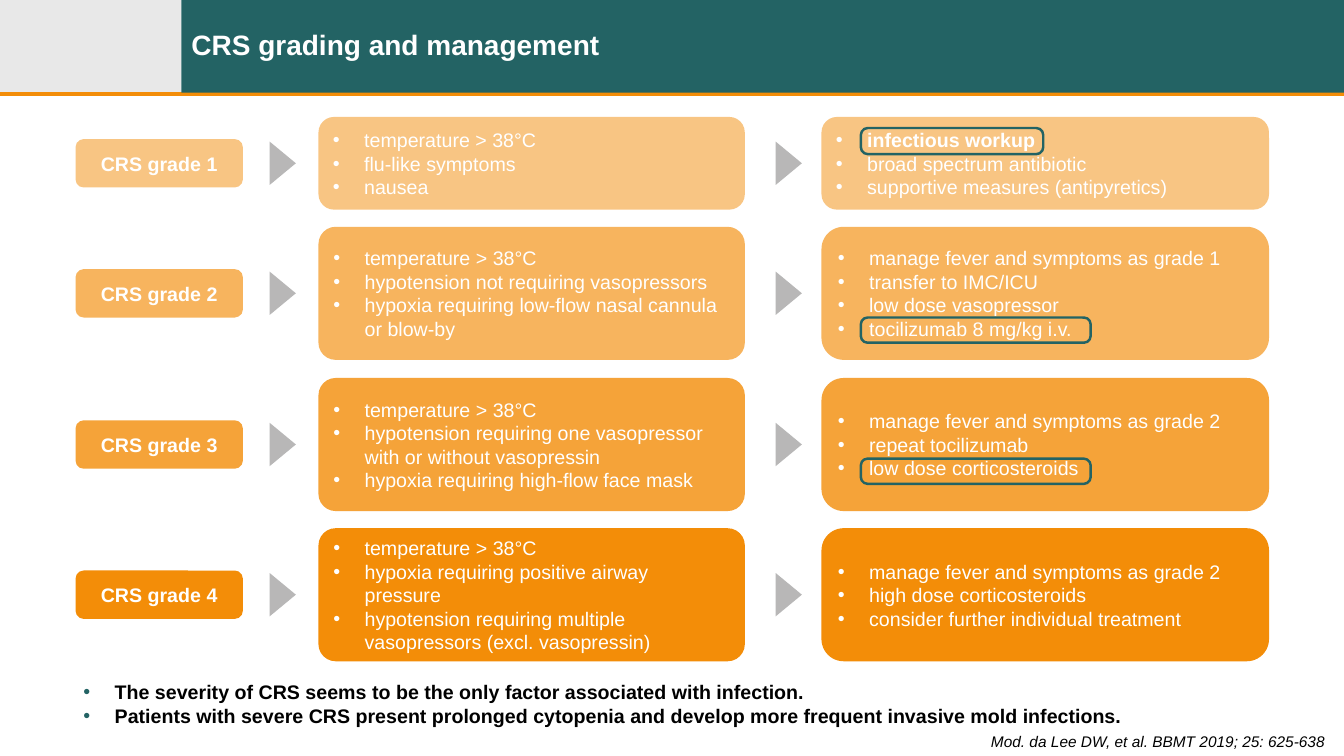
import pptx
import pptx.util
import pptx.dml.color
import pptx.enum.shapes
import pptx.enum.text
import lxml.etree

RGB = pptx.dml.color.RGBColor
KIND = pptx.enum.shapes.MSO_SHAPE
ALIGN = pptx.enum.text.PP_ALIGN
ANCHOR = pptx.enum.text.MSO_ANCHOR
NS = "http://schemas.openxmlformats.org/drawingml/2006/main"

TEAL = RGB(0x23, 0x63, 0x64)
ORANGE = RGB(0xF3, 0x8D, 0x08)
GREY = RGB(0xB8, 0xB7, 0xB7)
DARK = RGB(0x22, 0x22, 0x22)
WHITE = RGB(255, 255, 255)
BLACK = RGB(0, 0, 0)

COLS, ROWS = 160, 90
CELL = pptx.util.Inches(1) / 12
INDENT = pptx.util.Inches(0.31)

BODY = {"name": "Arial", "size": pptx.util.Pt(14), "bold": False, "italic": False}
STRONG = BODY | {"bold": True}
TITLE = STRONG | {"size": pptx.util.Pt(20)}
CITE = BODY | {"size": pptx.util.Pt(11), "italic": True}

HEAD = 11.04
LOGO = 21.6
ARROWS = (33.66, 93.9)

# row centre, box height, opacity, symptom corner, symptoms, care
GRADES = [
    (19.44, 11.04, 50, 0.167,
     ["temperature > 38°C", "flu-like symptoms", "nausea"],
     ["infectious workup", "broad spectrum antibiotic",
      "supportive measures (antipyretics)"]),
    (34.92, 15.84, 65, 0.129,
     ["temperature > 38°C", "hypotension not requiring vasopressors",
      "hypoxia requiring low-flow nasal cannula or blow-by"],
     ["manage fever and symptoms as grade 1", "transfer to IMC/ICU",
      "low dose vasopressor", "tocilizumab 8 mg/kg i.v."]),
    (52.92, 15.84, 80, 0.129,
     ["temperature > 38°C",
      "hypotension requiring one vasopressor with or without vasopressin",
      "hypoxia requiring high-flow face mask"],
     ["manage fever and symptoms as grade 2", "repeat tocilizumab",
      "low dose corticosteroids"]),
    (70.8, 15.84, 100, 0.129,
     ["temperature > 38°C", "hypoxia requiring positive airway pressure",
      "hypotension requiring multiple vasopressors (excl. vasopressin)"],
     ["manage fever and symptoms as grade 2", "high dose corticosteroids",
      "consider further individual treatment"]),
]
RINGS = [(15.24, 21.72, 3.12), (37.8, 27.36, 3), (54.6, 27.36, 3)]
NOTES = [
    "The severity of CRS seems to be the only factor associated with infection.",
    "Patients with severe CRS present prolonged cytopenia and develop more "
    "frequent invasive mold infections.",
]


def node(parent, tag, **attrs):
    return lxml.etree.SubElement(parent, f"{{{NS}}}{tag}", attrs)


def grid(*cells):
    """Turn grid cells into slide lengths."""
    return [round(cell * CELL) for cell in cells]


class Board:
    def __init__(self, slide):
        self.slide = slide

    def block(self, kind, place, fill=None, alpha=100, edge=None, bend=None):
        shape = self.slide.shapes.add_shape(kind, *grid(*place))
        shape.shadow.inherit = False
        if fill is None:
            shape.fill.background()
        else:
            shape.fill.solid()
            shape.fill.fore_color.rgb = fill
            if alpha < 100:
                tint = shape._element.spPr.find(f"{{{NS}}}solidFill/{{{NS}}}srgbClr")
                node(tint, "alpha", val=str(alpha * 1000))
        if edge is None:
            shape.line.fill.background()
        else:
            shape.line.color.rgb = edge
            shape.line.width = pptx.util.Pt(1.75)
        if bend is not None:
            shape.adjustments[0] = bend
        return shape

    def line(self, start, end, color, width):
        straight = pptx.enum.shapes.MSO_CONNECTOR.STRAIGHT
        rule = self.slide.shapes.add_connector(straight, *grid(*start, *end))
        rule.line.color.rgb = color
        rule.line.width = pptx.util.Pt(width)
        node(rule._element.spPr, "effectLst")

    def label(self, place, lines, look, color, anchor=ANCHOR.TOP, **more):
        box = self.slide.shapes.add_textbox(*grid(*place))
        self.text(box, lines, look, color, anchor=anchor, **more)
        return box

    def text(self, shape, lines, look, color, anchor=ANCHOR.MIDDLE,
             align=ALIGN.LEFT, dots=None, bold=()):
        """Fill a shape with paragraphs; dots is the bullet colour, if any."""
        frame = shape.text_frame
        frame.word_wrap = True
        frame.vertical_anchor = anchor
        for count, words in enumerate(lines):
            para = frame.add_paragraph() if count else frame.paragraphs[0]
            para.alignment = align
            if dots is not None:
                self.bullet(para, dots)
            run = para.add_run()
            run.text = words
            run.font.color.rgb = color
            for key, value in (STRONG if words in bold else look).items():
                setattr(run.font, key, value)

    def bullet(self, para, color):
        props = para._p.get_or_add_pPr()
        props.set("marL", str(INDENT))
        props.set("indent", str(-INDENT))
        node(node(props, "buClr"), "srgbClr", val=str(color))
        node(props, "buFont", typeface="Arial")
        node(props, "buChar", char="•")

    def arrow(self, mid, row):
        wide, high = 5.16, 3.12
        place = (mid - wide / 2, row - high / 2, wide, high)
        self.block(KIND.ISOSCELES_TRIANGLE, place, GREY).rotation = 90

    def grade(self, number, row, high, alpha, corner, signs, care):
        """Draw one grade: badge, symptoms, care and the arrows between."""
        def panel(left, wide, tall, bend=0.167):
            place = (left, row - tall / 2, wide, tall)
            return self.block(KIND.ROUNDED_RECTANGLE, place, ORANGE, alpha,
                              bend=bend)

        self.text(panel(9, 19.92, 5.76), [f"CRS grade {number}"], STRONG, WHITE,
                  align=ALIGN.CENTER)
        self.text(panel(37.92, 50.76, high, corner), signs, BODY, WHITE, dots=WHITE)
        self.text(panel(97.8, 53.28, high), care, BODY, WHITE, dots=WHITE,
                  bold=("infectious workup",))
        for mid in ARROWS:
            self.arrow(mid, row)


def main():
    deck = pptx.Presentation()
    deck.slide_width, deck.slide_height = grid(COLS, ROWS)
    board = Board(deck.slides.add_slide(deck.slide_layouts[6]))

    board.block(KIND.RECTANGLE, (0, 0, LOGO, HEAD), DARK, 10)
    board.line((0, 11.16), (COLS, 11.16), ORANGE, 3)
    board.block(KIND.RECTANGLE, (LOGO, 0, COLS - LOGO, HEAD), TEAL)
    title = board.label((LOGO, 0, 138, HEAD), ["CRS grading and management"],
                        TITLE, WHITE, ANCHOR.MIDDLE)
    title.text_frame.paragraphs[0].line_spacing = 0.9
    board.label((40.92, 86.52, 118.56, 3.48),
                ["Mod. da Lee DW, et al. BBMT 2019; 25: 625-638 "],
                CITE, BLACK, align=ALIGN.RIGHT)

    for number, grade in enumerate(GRADES, 1):
        board.grade(number, *grade)
    board.label((8.76, 80.4, 146.4, 6.84), NOTES, STRONG, BLACK, dots=TEAL)
    for top, wide, high in RINGS:
        board.block(KIND.ROUNDED_RECTANGLE, (102.48, top, wide, high),
                    edge=TEAL, bend=0.267)

    deck.save("out.pptx")


if __name__ == "__main__":
    main()
